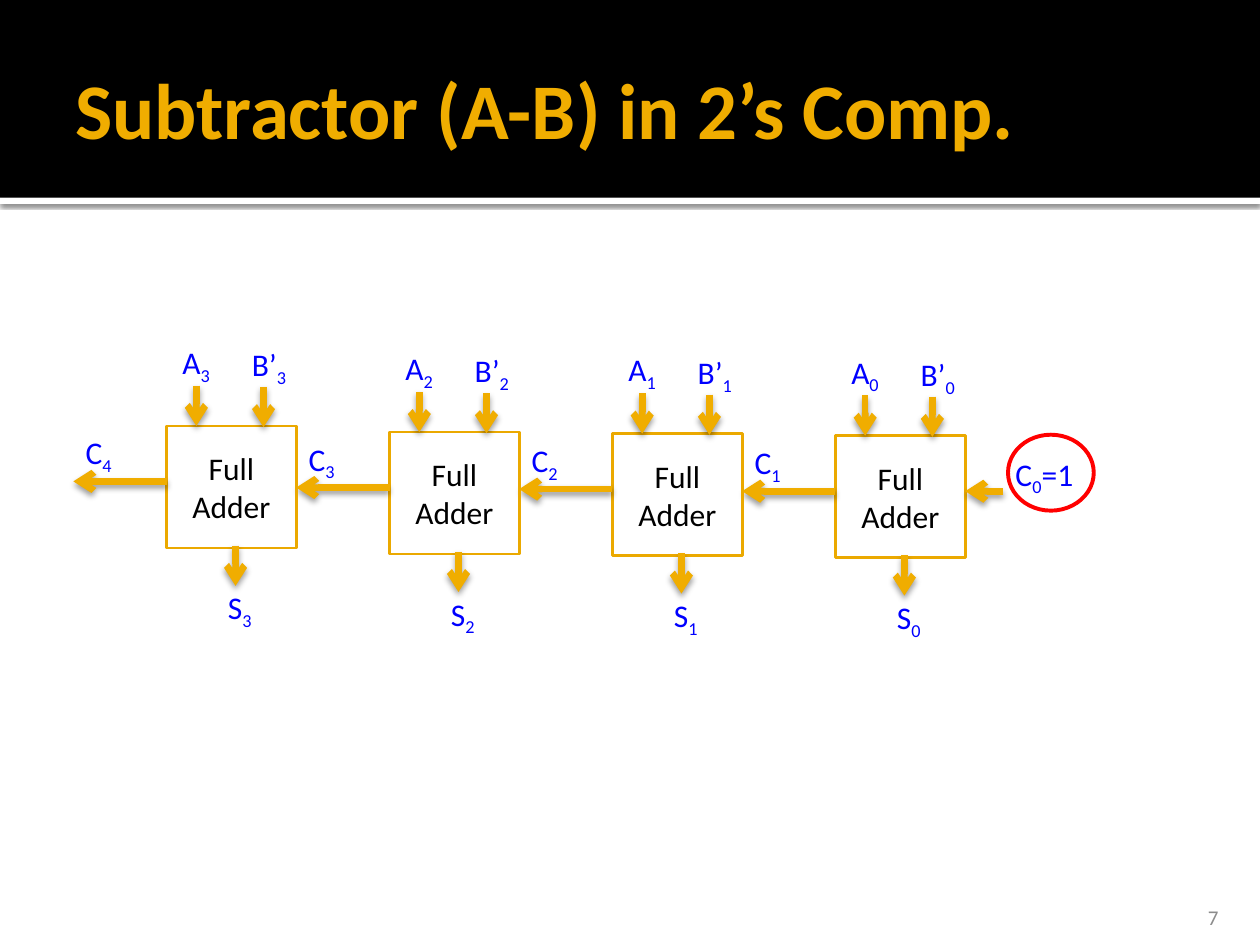
from lxml.etree import SubElement
from pptx import Presentation
from pptx.dml.color import RGBColor
from pptx.enum.shapes import MSO_CONNECTOR, MSO_SHAPE
from pptx.enum.text import MSO_ANCHOR, MSO_AUTO_SIZE, PP_ALIGN
from pptx.oxml.ns import qn
from pptx.util import Pt

theme = {
    "font": "Calibri",
    "black": RGBColor(0, 0, 0),
    "white": RGBColor(255, 255, 255),
    "gold": RGBColor(0xF0, 0xAD, 0x00),
    "edge": RGBColor(0xEB, 0xA9, 0x00),
    "blue": RGBColor(0, 0, 255),
    "red": RGBColor(255, 0, 0),
    "gray": RGBColor(0x8C, 0x8C, 0x8C),
    "title": Pt(45),
    "body": Pt(18),
    "small": Pt(12),
}


def write(shape, text, size, color, form, align=PP_ALIGN.LEFT, bold=False):
    """Fill a shape with text; parts between underscores are subscripts."""
    frame = shape.text_frame
    for name, value in form.items():
        setattr(frame, name, value)
    for row, line in enumerate(text.split("\n")):
        para = frame.add_paragraph() if row else frame.paragraphs[0]
        para.alignment = align
        for spot, part in enumerate(line.split("_")):
            if not part:
                continue
            run = para.add_run()
            run.text = part
            look = {"name": theme["font"], "size": theme[size], "bold": bold}
            for name, value in look.items():
                setattr(run.font, name, value)
            run.font.color.rgb = theme[color]
            if spot % 2:
                run._r.get_or_add_rPr().set("baseline", "-25000")


def shade(item, alpha, blur, dist):
    """Give a shape or connector a black shadow that falls straight down."""
    props = item._element.spPr
    for old in props.findall(qn("a:effectLst")):
        props.remove(old)
    cast = SubElement(SubElement(props, qn("a:effectLst")), qn("a:outerShdw"),
                      blurRad=str(Pt(blur)), dist=str(Pt(dist)),
                      dir="5400000", algn="t", rotWithShape="0")
    tint = SubElement(cast, qn("a:srgbClr"), val="000000")
    SubElement(tint, qn("a:alpha"), val=str(alpha * 1000))


deck = Presentation()
deck.slide_width, deck.slide_height = Pt(720), Pt(540)
slide = deck.slides.add_slide(deck.slide_layouts[6])
shapes = slide.shapes

# Header band and the white strip below it
for top, high, color in ((113, 3.6, "white"), (0, 113, "black")):
    band = shapes.add_shape(MSO_SHAPE.RECTANGLE, 0, Pt(top), Pt(720), Pt(high))
    band.shadow.inherit = False
    band.fill.solid()
    band.fill.fore_color.rgb = theme[color]
    band.line.fill.background()
    if color == "white":
        shade(band, 60, 2.5, 0.8)

# Title and page number
title = shapes.add_textbox(Pt(36), Pt(12.2), Pt(648), Pt(98.6))
write(title, "Subtractor (A-B) in 2’s Comp.", "title", "gold",
      {"word_wrap": True, "vertical_anchor": MSO_ANCHOR.MIDDLE,
       "margin_right": Pt(3.6)}, bold=True)
page = shapes.add_textbox(Pt(645.8), Pt(509.8), Pt(57.6), Pt(21.6))
write(page, "7", "small", "gray",
      {"word_wrap": True, "vertical_anchor": MSO_ANCHOR.BOTTOM,
       "margin_bottom": 0}, PP_ALIGN.RIGHT)

# Adder stages, bit 0 at the right; offsets are from each box's corner
wide, high, step = 74.2, 69.8, 127.4
tops = (249, 247.8, 246.9, 243.4)
mid = 31.7
wires = [
    (17, -23, 17, 0),
    (55.4, -22.3, 55.4, 0.7),
    (0, mid, -53.3, mid),
    (39.4, 68.4, 39.4, 91.4),
]
tags = [
    ("B’_{0}", 41.6, -49.7, 35.3),
    ("A_{0}", 2, -51.1, 31),
    ("C_{1}", -53.3, 0.7, 31),
    ("S_{0}", 28, 89.3, 28.8),
]
first_wire = (95.8, mid, wide, mid)
first_tag = ("C_{0}_=1", 95.8, 7.2, 49)
label = {"word_wrap": False, "auto_size": MSO_AUTO_SIZE.SHAPE_TO_FIT_TEXT}

for bit, top in enumerate(tops):
    left = 477.4 - step * bit
    stage = shapes.add_group_shape().shapes

    # Adder box
    box = stage.add_shape(MSO_SHAPE.RECTANGLE, Pt(left), Pt(top),
                          Pt(wide), Pt(high))
    box.shadow.inherit = False
    box.fill.background()
    box.line.color.rgb = theme["edge"]
    box.line.width = Pt(1.5)
    write(box, "Full\nAdder", "body", "black",
          {"word_wrap": True, "vertical_anchor": MSO_ANCHOR.MIDDLE},
          PP_ALIGN.CENTER)

    # Signal arrows
    for x1, y1, x2, y2 in wires + ([] if bit else [first_wire]):
        wire = stage.add_connector(MSO_CONNECTOR.STRAIGHT,
                                   Pt(left + x1), Pt(top + y1),
                                   Pt(left + x2), Pt(top + y2))
        wire.line.color.rgb = theme["gold"]
        wire.line.width = Pt(3.78)
        SubElement(wire.line._get_or_add_ln(), qn("a:tailEnd"), type="arrow")
        shade(wire, 38, 3.5, 2)

    # Signal names
    for text, x, y, span in tags + ([] if bit else [first_tag]):
        tag = stage.add_textbox(Pt(left + x), Pt(top + y), Pt(span), Pt(29))
        write(tag, text.format(bit, bit + 1) if "{1}" not in text
              else text.replace("{1}", str(bit + 1)), "body", "blue", label)

# Ring around the carry-in
ring = shapes.add_shape(MSO_SHAPE.OVAL, Pt(576), Pt(248.4), Pt(49), Pt(43.4))
ring.shadow.inherit = False
ring.fill.background()
ring.line.color.rgb = theme["red"]
ring.line.width = Pt(2.25)

deck.save("out.pptx")
